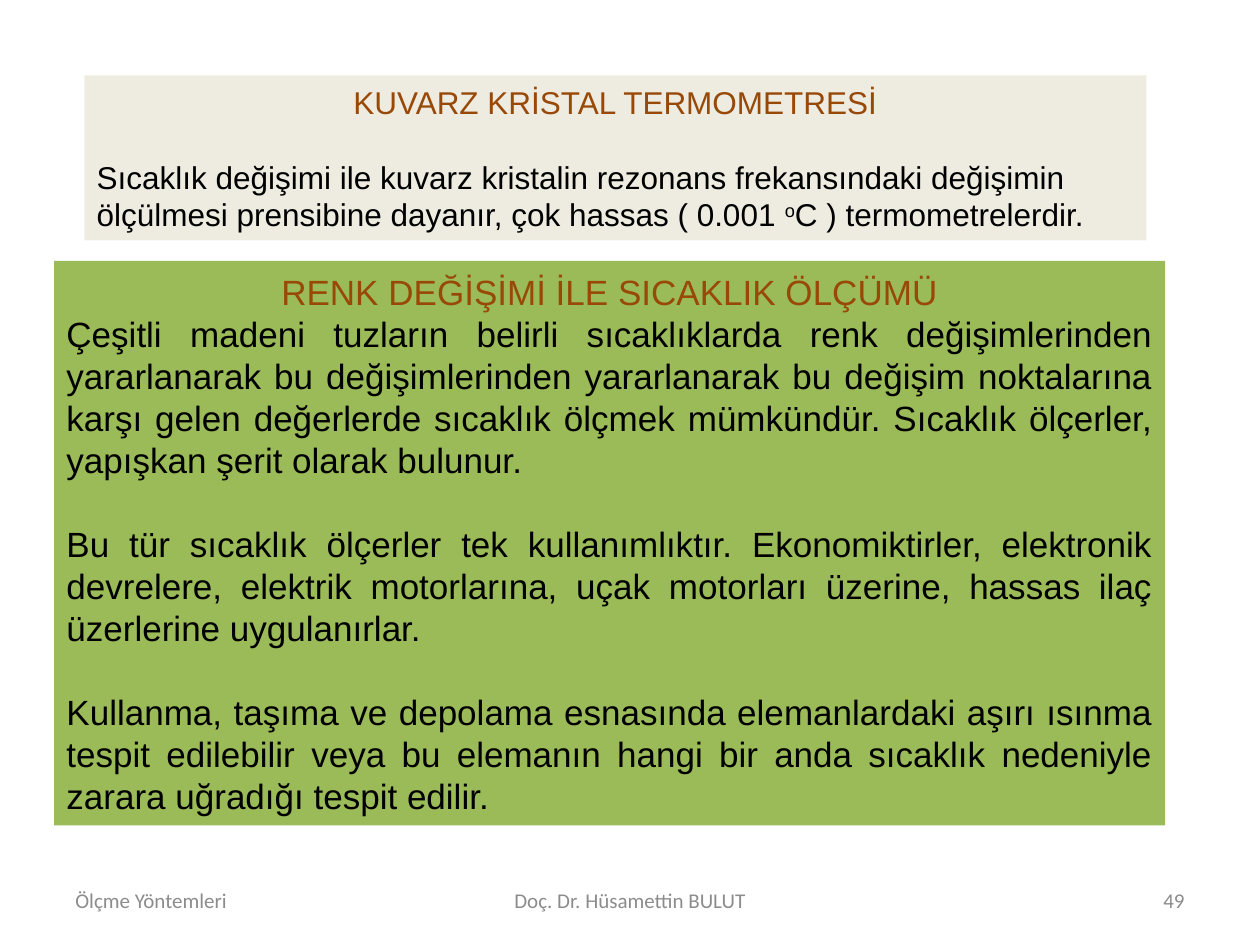
import pptx
import pptx.util
import pptx.dml.color
import pptx.enum.shapes
import pptx.enum.text
from pptx.util import Cm, Pt

ALIGN = pptx.enum.text.PP_ALIGN
BROWN, BLACK, GREY = "984807", "000000", "8C8C8C"

# Content: each paragraph is a list of (text, is_superscript)
PANELS = [
    dict(
        place=(1.09, 5.26, 22.4, 11.38), fill="9BBB59", size=20, leading=24,
        heading="RENK DEĞİŞİMİ İLE SICAKLIK ÖLÇÜMÜ", heading_gap=0,
        align=ALIGN.JUSTIFY,
        body=[
            [("Çeşitli madeni tuzların belirli sıcaklıklarda renk değişimlerinden "
              "yararlanarak bu değişimlerinden yararlanarak bu değişim noktalarına "
              "karşı gelen değerlerde sıcaklık ölçmek mümkündür. Sıcaklık ölçerler, "
              "yapışkan şerit olarak bulunur.", False)],
            [("Bu tür sıcaklık ölçerler tek kullanımlıktır. Ekonomiktirler, "
              "elektronik devrelere, elektrik motorlarına, uçak motorları üzerine, "
              "hassas ilaç üzerlerine uygulanırlar.", False)],
            [("Kullanma, taşıma ve depolama esnasında elemanlardaki aşırı ısınma "
              "tespit edilebilir veya bu elemanın hangi bir anda sıcaklık nedeniyle "
              "zarara uğradığı tespit edilir.", False)],
        ],
    ),
    dict(
        place=(1.7, 1.52, 21.41, 3.33), fill="EEECE1", size=18, leading=21.5,
        heading="KUVARZ KRİSTAL TERMOMETRESİ", heading_gap=21.5,
        align=ALIGN.LEFT,
        body=[
            [("Sıcaklık değişimi ile kuvarz kristalin rezonans frekansındaki "
              "değişimin ölçülmesi prensibine dayanır, çok hassas ( 0.001 ", False),
             ("o", True), ("C ) termometrelerdir.", False)],
        ],
    ),
]
FOOTERS = [
    ("Ölçme Yöntemleri", 1.27, 5.93, ALIGN.LEFT),
    ("Doç. Dr. Hüsamettin BULUT", 8.68, 8.04, ALIGN.CENTER),
    ("49", 18.2, 5.93, ALIGN.RIGHT),
]
FOOTER_TOP, FOOTER_HEIGHT = 17.64, 1.01


def color(hex_text):
    return pptx.dml.color.RGBColor.from_string(hex_text)


def write(para, pieces, size=12, font="Arial", ink=BLACK, align=ALIGN.LEFT,
          before=0, leading=None):
    """Fill a paragraph with (text, is_superscript) pieces."""
    para.alignment = align
    para.space_before = Pt(before)
    if leading:
        para.line_spacing = Pt(leading)
    for text, raised in pieces:
        span = para.add_run()
        span.text = text
        span.font.size = Pt(size)
        span.font.name = font
        span.font.color.rgb = color(ink)
        if raised:
            span.font._element.set("baseline", "30000")


def prepare(box):
    frame = box.text_frame
    frame.word_wrap = True
    frame.vertical_anchor = pptx.enum.text.MSO_ANCHOR.MIDDLE
    return frame


def add_panel(page, panel):
    box = page.shapes.add_shape(pptx.enum.shapes.MSO_SHAPE.RECTANGLE,
                                *map(Cm, panel["place"]))
    box.shadow.inherit = False
    box.fill.solid()
    box.fill.fore_color.rgb = color(panel["fill"])
    box.line.fill.background()
    frame = prepare(box)
    style = dict(size=panel["size"], leading=panel["leading"])
    write(frame.paragraphs[0], [(panel["heading"], False)], ink=BROWN,
          align=ALIGN.CENTER, **style)
    # One line of space separates the body paragraphs
    for index, pieces in enumerate(panel["body"]):
        gap = panel["leading"] if index else panel["heading_gap"]
        write(frame.add_paragraph(), pieces, align=panel["align"],
              before=gap, **style)


def main():
    deck = pptx.Presentation()
    deck.slide_width, deck.slide_height = Cm(25.4), Cm(19.05)
    page = deck.slides.add_slide(deck.slide_layouts[6])

    # Text panels
    for panel in PANELS:
        add_panel(page, panel)

    # Footer row
    for text, left, width, align in FOOTERS:
        box = page.shapes.add_textbox(Cm(left), Cm(FOOTER_TOP),
                                      Cm(width), Cm(FOOTER_HEIGHT))
        write(prepare(box).paragraphs[0], [(text, False)], font="Calibri",
              ink=GREY, align=align)

    deck.save("out.pptx")


if __name__ == "__main__":
    main()
